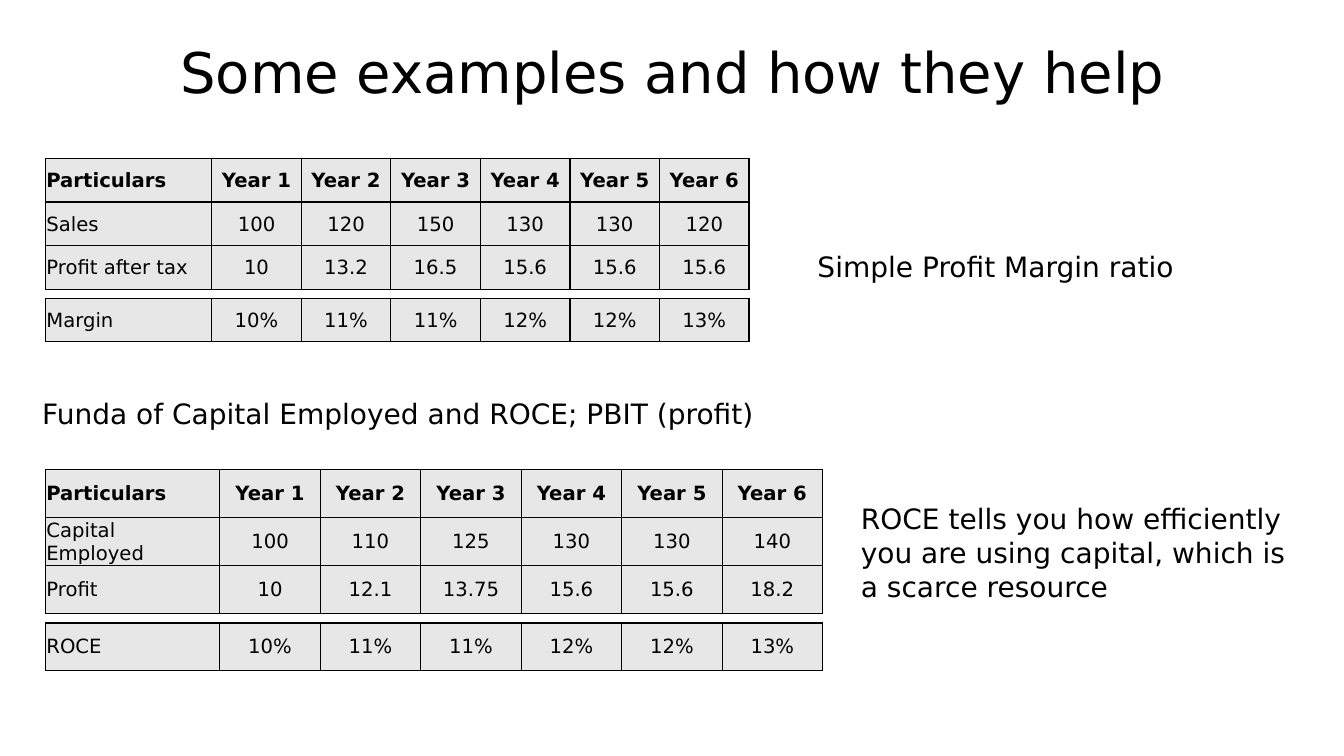
import lxml.etree
import pptx
import pptx.dml.color
import pptx.enum.text
import pptx.oxml.ns
import pptx.util

Inches = pptx.util.Inches
Pt = pptx.util.Pt
Align = pptx.enum.text.PP_ALIGN
Anchor = pptx.enum.text.MSO_ANCHOR
qn = pptx.oxml.ns.qn

THEME = {
    "font": "DejaVu Sans",
    "ink": pptx.dml.color.RGBColor.from_string("000000"),
    "cell": pptx.dml.color.RGBColor.from_string("E7E7E7"),
    "title": Pt(40),
    "note": Pt(20),
    "figure": Pt(14),
    "border": Pt(1),
}
CELL_FORMAT = {
    "margin_left": Inches(0.01),
    "margin_right": Inches(0.01),
    "margin_top": Inches(0.01),
    "margin_bottom": 0,
    "vertical_anchor": Anchor.MIDDLE,
}


def write(frame, words, size, align, bold=False):
    paragraph = frame.paragraphs[0]
    paragraph.alignment = align
    run = paragraph.add_run()
    run.text = words
    font_format = {"name": THEME["font"], "size": size, "bold": bold}
    for attribute, value in font_format.items():
        setattr(run.font, attribute, value)
    run.font.color.rgb = THEME["ink"]
    return paragraph


def add_border(cell):
    properties = cell._tc.get_or_add_tcPr()
    for side in ("a:lnL", "a:lnR", "a:lnT", "a:lnB"):
        line = lxml.etree.SubElement(properties, qn(side), w=str(THEME["border"]))
        fill = lxml.etree.SubElement(line, qn("a:solidFill"))
        lxml.etree.SubElement(fill, qn("a:srgbClr"), val=str(THEME["ink"]))


deck = pptx.Presentation()
deck.slide_width = Inches(13.33)
deck.slide_height = Inches(7.5)
slide = deck.slides.add_slide(deck.slide_layouts[6])

heading = slide.shapes.add_textbox(Inches(0.92), Inches(0.02), Inches(11.5), Inches(1.45)).text_frame
heading.word_wrap = True
heading.vertical_anchor = Anchor.MIDDLE
write(heading, "Some examples and how they help", THEME["title"], Align.CENTER).line_spacing = 0.9

notes = [
    (8.01, 2.43, 3.9, 0.44, "Simple Profit Margin ratio"),
    (0.32, 3.88, 7.48, 0.44, "Funda of Capital Employed and ROCE; PBIT (profit)"),
    (8.44, 4.93, 4.44, 1.11,
     "ROCE tells you how efficiently you are using capital, which is a scarce resource"),
]
for left, top, width, height, words in notes:
    note = slide.shapes.add_textbox(Inches(left), Inches(top), Inches(width), Inches(height)).text_frame
    note.word_wrap = True
    write(note, words, THEME["note"], Align.LEFT)

years = ["Particulars"] + [f"Year {number}" for number in range(1, 7)]
ratios = ["10%", "11%", "11%", "12%", "12%", "13%"]
margin_inputs = [
    years,
    ["Sales", "100", "120", "150", "130", "130", "120"],
    ["Profit after tax", "10", "13.2", "16.5", "15.6", "15.6", "15.6"],
]
roce_inputs = [
    years,
    ["Capital Employed", "100", "110", "125", "130", "130", "140"],
    ["Profit", "10", "12.1", "13.75", "15.6", "15.6", "18.2"],
]
statements = [
    (1.57, 6.98, 1.65, 1.3, margin_inputs),
    (2.96, 6.98, 1.65, 0.43, [["Margin"] + ratios]),
    (4.66, 7.71, 1.73, 1.42, roce_inputs),
    (6.18, 7.71, 1.73, 0.47, [["ROCE"] + ratios]),
]
for top, width, label_width, height, entries in statements:
    statement = slide.shapes.add_table(
        len(entries), len(years), Inches(0.45), Inches(top), Inches(width), Inches(height)).table
    statement.first_row = False
    statement.horz_banding = False
    for index, column in enumerate(statement.columns):
        column.width = Inches((width - label_width) / 6 if index else label_width)
    for row, entry in enumerate(entries):
        for column, words in enumerate(entry):
            cell = statement.cell(row, column)
            for attribute, value in CELL_FORMAT.items():
                setattr(cell, attribute, value)
            add_border(cell)
            cell.fill.solid()
            cell.fill.fore_color.rgb = THEME["cell"]
            align = Align.CENTER if column else Align.LEFT
            write(cell.text_frame, words, THEME["figure"], align, entry is years)

deck.save("out.pptx")
